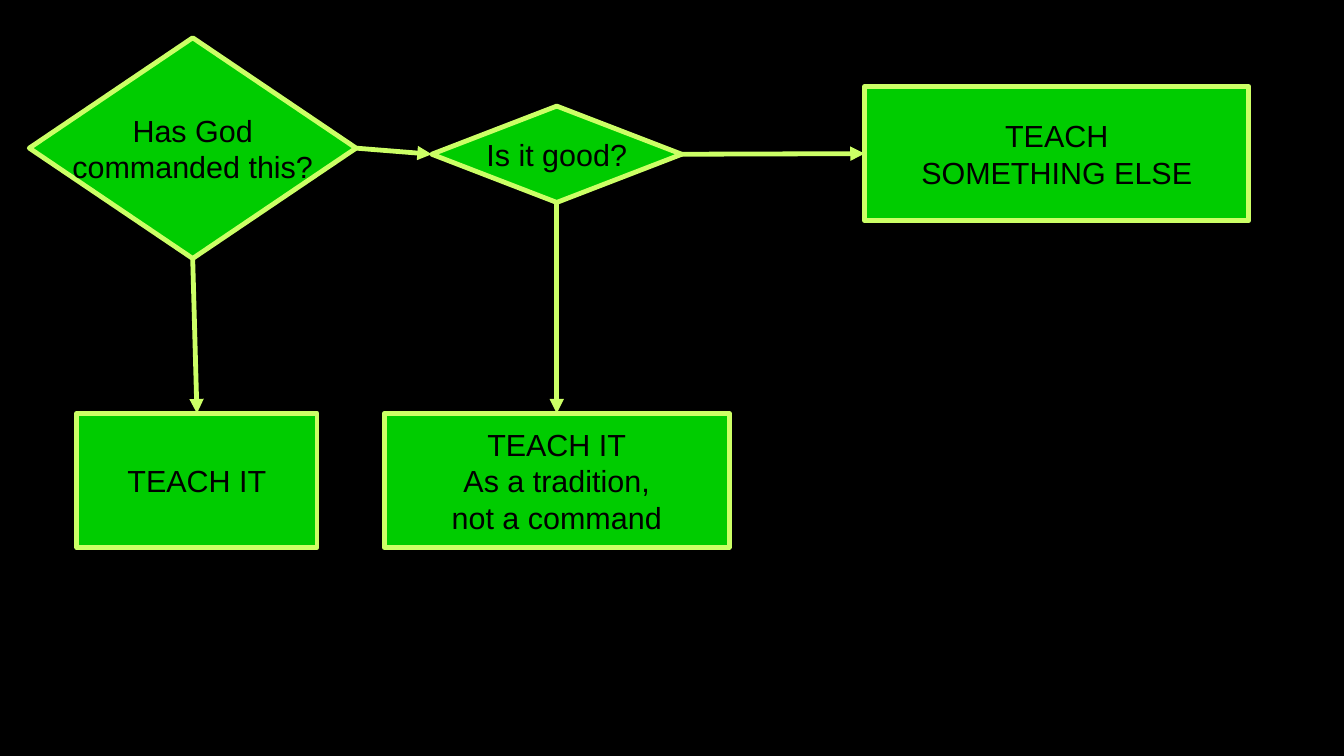
from lxml.etree import SubElement
from pptx import Presentation
from pptx.dml.color import RGBColor
from pptx.enum.shapes import MSO_CONNECTOR, MSO_SHAPE
from pptx.enum.text import MSO_ANCHOR, PP_ALIGN
from pptx.oxml.ns import qn
from pptx.util import Inches, Pt

BLACK = RGBColor(0x00, 0x00, 0x00)
GREEN = RGBColor(0x00, 0xCC, 0x00)
LIME = RGBColor(0xCC, 0xFF, 0x66)
LINE_WIDTH = Pt(2.83)
TOP, LEFT, BOTTOM, RIGHT = range(4)

# name: (shape type, left, top, width, height, text)
NODES = {
    "commanded": (MSO_SHAPE.DIAMOND, 0.24, 0.31, 2.68, 1.81, "Has God\ncommanded this?"),
    "good": (MSO_SHAPE.DIAMOND, 3.54, 0.87, 2.05, 0.79, "Is it good?"),
    "teach": (MSO_SHAPE.RECTANGLE, 0.63, 3.39, 1.97, 1.1, "TEACH IT"),
    "something else": (MSO_SHAPE.RECTANGLE, 7.09, 0.71, 3.15, 1.1, "TEACH\nSOMETHING ELSE"),
    "tradition": (MSO_SHAPE.RECTANGLE, 3.15, 3.39, 2.83, 1.1,
                  "TEACH IT\nAs a tradition,\nnot a command"),
}
# (from node, from side, to node, to side)
ARROWS = [
    ("commanded", RIGHT, "good", LEFT),
    ("commanded", BOTTOM, "teach", TOP),
    ("good", BOTTOM, "tradition", TOP),
    ("good", RIGHT, "something else", LEFT),
]


def style_line(line):
    """Give the line its colour, width and round corners."""
    line.color.rgb = LIME
    line.width = LINE_WIDTH
    line_element = line._get_or_add_ln()
    SubElement(line_element, qn("a:round"))
    return line_element


def add_node(slide, shape_type, left, top, width, height, text):
    shape = slide.shapes.add_shape(
        shape_type, Inches(left), Inches(top), Inches(width), Inches(height))
    shape.shadow.inherit = False
    shape.fill.solid()
    shape.fill.fore_color.rgb = GREEN
    style_line(shape.line)
    frame = shape.text_frame
    frame.word_wrap = False
    frame.vertical_anchor = MSO_ANCHOR.MIDDLE
    frame.margin_left = frame.margin_right = 0
    frame.margin_top = frame.margin_bottom = 0
    paragraph = frame.paragraphs[0]
    paragraph.text = text
    paragraph.alignment = PP_ALIGN.CENTER
    paragraph.font.name = "Arial"
    paragraph.font.size = Pt(18)
    paragraph.font.color.rgb = BLACK
    return shape


def add_arrow(slide, start, start_side, end, end_side):
    connector = slide.shapes.add_connector(MSO_CONNECTOR.STRAIGHT, 0, 0, 0, 0)
    connector.begin_connect(start, start_side)
    connector.end_connect(end, end_side)
    line_element = style_line(connector.line)
    SubElement(line_element, qn("a:tailEnd"), type="triangle")
    SubElement(connector._element.spPr, qn("a:effectLst"))


def main():
    presentation = Presentation()
    presentation.slide_width = Inches(11.02)
    presentation.slide_height = Inches(6.2)
    slide = presentation.slides.add_slide(presentation.slide_layouts[6])
    slide.background.fill.solid()
    slide.background.fill.fore_color.rgb = BLACK

    shapes = {name: add_node(slide, *node) for name, node in NODES.items()}
    for start, start_side, end, end_side in ARROWS:
        add_arrow(slide, shapes[start], start_side, shapes[end], end_side)
    presentation.save("out.pptx")


if __name__ == "__main__":
    main()
